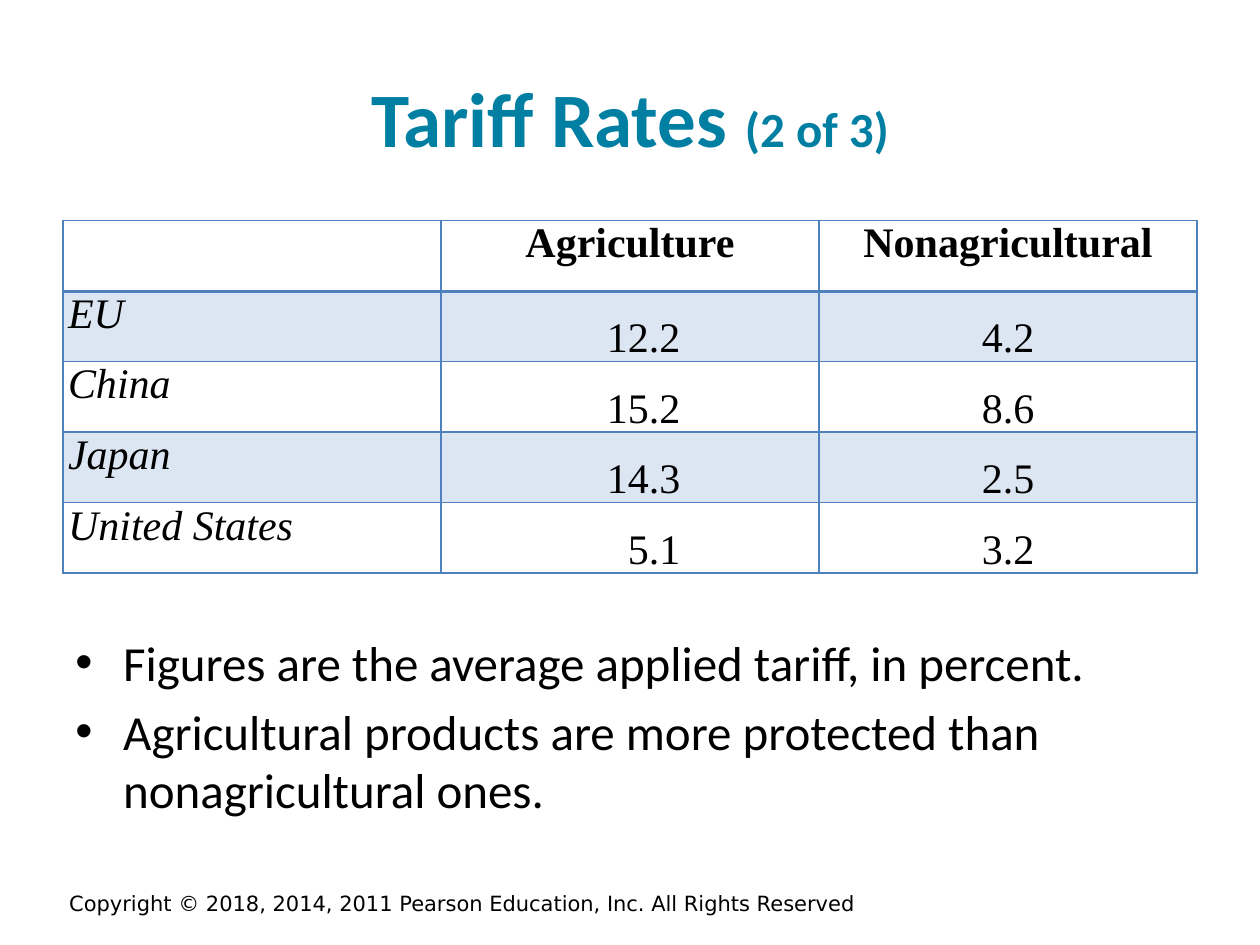
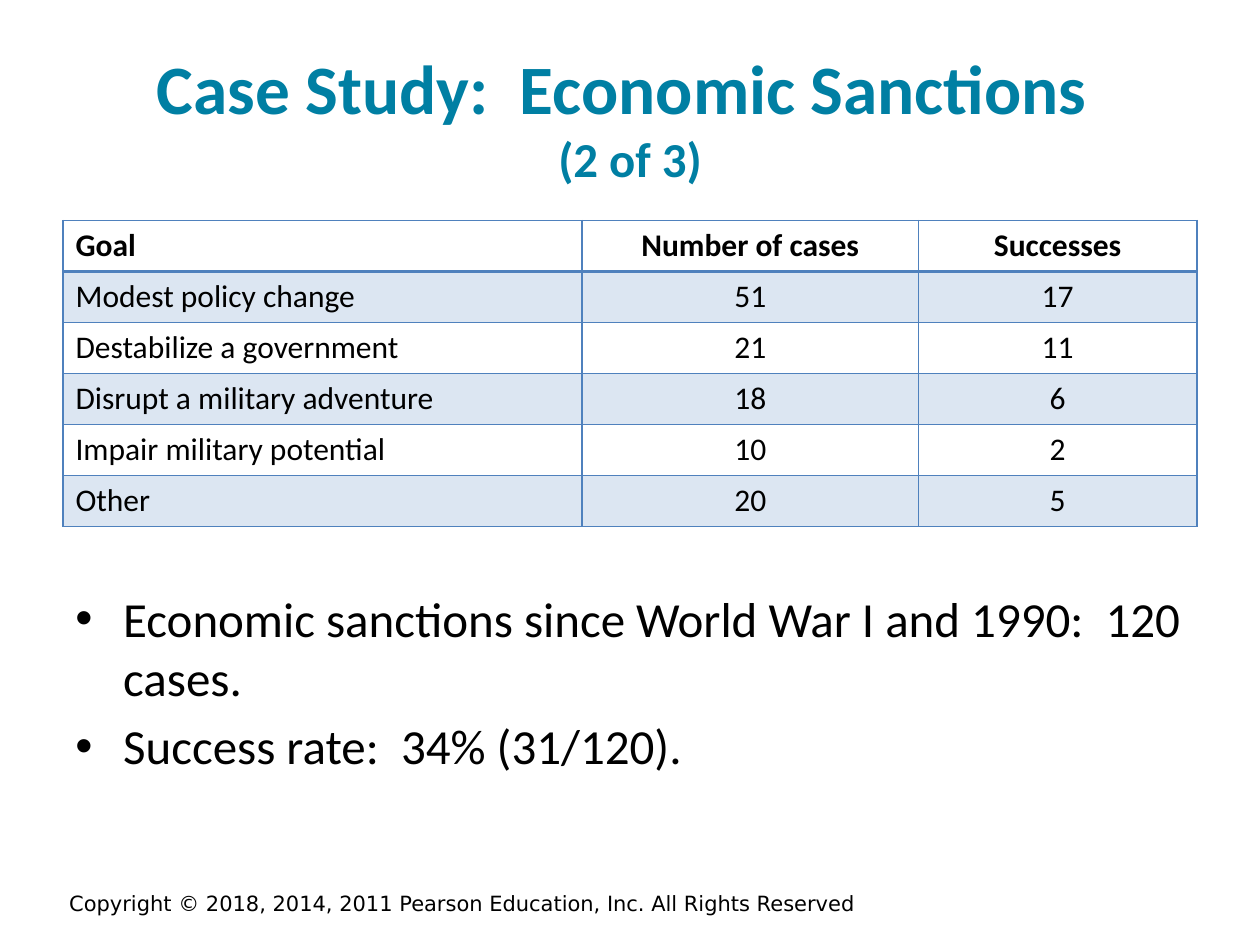
from dataclasses import dataclass

from lxml import etree
from pptx import Presentation
from pptx.dml.color import RGBColor
from pptx.enum import text
from pptx.oxml import ns
from pptx.util import Inches, Pt

LEFT, CENTER, RIGHT = text.PP_ALIGN.LEFT, text.PP_ALIGN.CENTER, text.PP_ALIGN.RIGHT
TOP, MIDDLE, BOTTOM = text.MSO_ANCHOR.TOP, text.MSO_ANCHOR.MIDDLE, text.MSO_ANCHOR.BOTTOM


@dataclass(frozen=True)
class Theme:
    title: str = "007FA3"
    ink: str = "000000"
    border: str = "4F81BD"
    band: str = "DCE6F2"
    font: str = "Calibri"
    footer_font: str = "DejaVu Sans"
    body_size: float = 28
    footer_size: float = 12
    rule: float = 1
    header_rule: float = 2
    left: float = 0.5
    width: float = 9
    table_top: float = 1.75
    body_bottom: float = 6.7


THEME = Theme()
FOOTER = "Copyright © 2018, 2014, 2011 Pearson Education, Inc. All Rights Reserved"


@dataclass(frozen=True)
class Column:
    heading: str
    width: float
    align: text.PP_ALIGN = CENTER
    heading_align: text.PP_ALIGN = CENTER
    anchor: text.MSO_ANCHOR = TOP
    italic: bool = False
    right_inset: float | None = None


@dataclass(frozen=True)
class TableStyle:
    font: str
    size: float
    height: float
    side_inset: float
    end_inset: float


@dataclass(frozen=True)
class TableSlide:
    title: str
    title_size: float
    counter: str
    counter_size: float
    counter_on_new_line: bool
    style: TableStyle
    columns: list[Column]
    rows: list[tuple[str, ...]]
    bullets_top: float
    bullets: list[str]


SLIDES = [
    TableSlide(
        "Tariff Rates ", 44, "(2 of 3)", 28, False,
        TableStyle("Times New Roman", 24, 2.8, 0.04, 0),
        [
            Column("", 3, LEFT, LEFT, italic=True),
            Column("Agriculture", 3, RIGHT, anchor=BOTTOM, right_inset=1.1),
            Column("Nonagricultural", 3, anchor=BOTTOM),
        ],
        [
            ("EU", "12.2", "4.2"),
            ("China", "15.2", "8.6"),
            ("Japan", "14.3", "2.5"),
            ("United States", "5.1", "3.2"),
        ],
        4.97,
        [
            "Figures are the average applied tariff, in percent.",
            "Agricultural products are more protected than nonagricultural ones.",
        ],
    ),
    TableSlide(
        "Case Study:  Economic Sanctions ", 39.6, "(2 of 3)", 27.9, True,
        TableStyle("Calibri", 18, 2.43, 0.1, 0.05),
        [
            Column("Goal", 4.12, LEFT, LEFT),
            Column("Number of cases", 2.67),
            Column("Successes", 2.21),
        ],
        [
            ("Modest policy change", "51", "17"),
            ("Destabilize a government", "21", "11"),
            ("Disrupt a military adventure", "18", "6"),
            ("Impair military potential", "10", "2"),
            ("Other", "20", "5"),
        ],
        4.62,
        [
            "Economic sanctions since World War I and 1990:  120 cases.",
            "Success rate:  34% (31/120).",
        ],
    ),
]


def set_font(paragraph, name: str, color: str, size: float | None = None,
             bold: bool = False, italic: bool = False) -> None:
    font = paragraph.font
    font.name, font.bold, font.italic = name, bold, italic
    font.color.rgb = RGBColor.from_string(color)
    if size:
        font.size = Pt(size)


def add_text_frame(slide, left: float, top: float, width: float, height: float):
    box = slide.shapes.add_textbox(Inches(left), Inches(top), Inches(width), Inches(height))
    box.text_frame.word_wrap = True
    return box.text_frame


def add_title(slide, content: TableSlide) -> None:
    title = slide.shapes.title
    title.left, title.top = Inches(THEME.left), Inches(0.3)
    title.width, title.height = Inches(THEME.width), Inches(1.25)
    frame = title.text_frame
    frame.auto_size = text.MSO_AUTO_SIZE.NONE
    frame.vertical_anchor = MIDDLE
    paragraph = frame.paragraphs[0]
    paragraph.alignment = CENTER
    set_font(paragraph, THEME.font, THEME.title, bold=True)
    name = paragraph.add_run()
    name.text, name.font.size = content.title, Pt(content.title_size)
    if content.counter_on_new_line:
        paragraph.add_line_break()
    counter = paragraph.add_run()
    counter.text, counter.font.size = content.counter, Pt(content.counter_size)


def set_borders(cell, top: float, bottom: float) -> None:
    properties = cell._tc.get_or_add_tcPr()
    widths = {"a:lnL": THEME.rule, "a:lnR": THEME.rule, "a:lnT": top, "a:lnB": bottom}
    for tag, width in widths.items():
        line = etree.SubElement(properties, ns.qn(tag), w=str(Pt(width)))
        fill = etree.SubElement(line, ns.qn("a:solidFill"))
        etree.SubElement(fill, ns.qn("a:srgbClr"), val=THEME.border)


def fill_cell(cell, value: str, row: int, column: Column, style: TableStyle) -> None:
    """Write and format one cell; row 0 is the header and odd rows are banded."""
    header = row == 0
    set_borders(cell,
                top=THEME.header_rule if row == 1 else THEME.rule,
                bottom=THEME.header_rule if header else THEME.rule)
    if row % 2:
        cell.fill.solid()
        cell.fill.fore_color.rgb = RGBColor.from_string(THEME.band)
    else:
        cell.fill.background()
    own_inset = column.right_inset is not None and not header
    cell.margin_left = Inches(style.side_inset)
    cell.margin_right = Inches(column.right_inset if own_inset else style.side_inset)
    cell.margin_top = cell.margin_bottom = Inches(style.end_inset)
    cell.vertical_anchor = TOP if header else column.anchor
    paragraph = cell.text_frame.paragraphs[0]
    paragraph.text = value
    paragraph.alignment = column.heading_align if header else column.align
    set_font(paragraph, style.font, THEME.ink, style.size,
             bold=header, italic=column.italic and not header)


def add_data_table(slide, content: TableSlide) -> None:
    style = content.style
    rows = [tuple(column.heading for column in content.columns), *content.rows]
    table = slide.shapes.add_table(
        len(rows), len(content.columns), Inches(THEME.left), Inches(THEME.table_top),
        Inches(THEME.width), Inches(style.height)).table
    table.first_row = table.horz_banding = False
    for table_column, column in zip(table.columns, content.columns):
        table_column.width = Inches(column.width)
    for row, values in enumerate(rows):
        table.rows[row].height = Inches(style.height / len(rows))
        for index, (value, column) in enumerate(zip(values, content.columns)):
            fill_cell(table.cell(row, index), value, row, column, style)


def add_bullets(slide, content: TableSlide) -> None:
    frame = add_text_frame(slide, THEME.left, content.bullets_top, THEME.width,
                           THEME.body_bottom - content.bullets_top)
    for index, line in enumerate(content.bullets):
        paragraph = frame.add_paragraph() if index else frame.paragraphs[0]
        paragraph.text = line
        if index:
            paragraph.space_before = Pt(0.2 * THEME.body_size)
        properties = paragraph._p.get_or_add_pPr()
        properties.set("marL", str(Inches(0.38)))
        properties.set("indent", str(-Inches(0.38)))
        etree.SubElement(properties, ns.qn("a:buFont"), typeface="Arial")
        etree.SubElement(properties, ns.qn("a:buChar"), char="•")
        set_font(paragraph, THEME.font, THEME.ink, THEME.body_size)


def add_footer(slide) -> None:
    frame = add_text_frame(slide, -0.12, 6.99, 7.58, 0.36)
    frame.vertical_anchor = MIDDLE
    paragraph = frame.paragraphs[0]
    paragraph.text = FOOTER
    paragraph.alignment = CENTER
    set_font(paragraph, THEME.footer_font, THEME.ink, THEME.footer_size)


def main() -> None:
    presentation = Presentation()
    presentation.slide_width, presentation.slide_height = Inches(10), Inches(7.5)
    title_only = presentation.slide_layouts.get_by_name("Title Only")
    for content in SLIDES:
        slide = presentation.slides.add_slide(title_only)
        add_footer(slide)
        add_title(slide, content)
        add_data_table(slide, content)
        add_bullets(slide, content)
    presentation.save("out.pptx")


if __name__ == "__main__":
    main()
